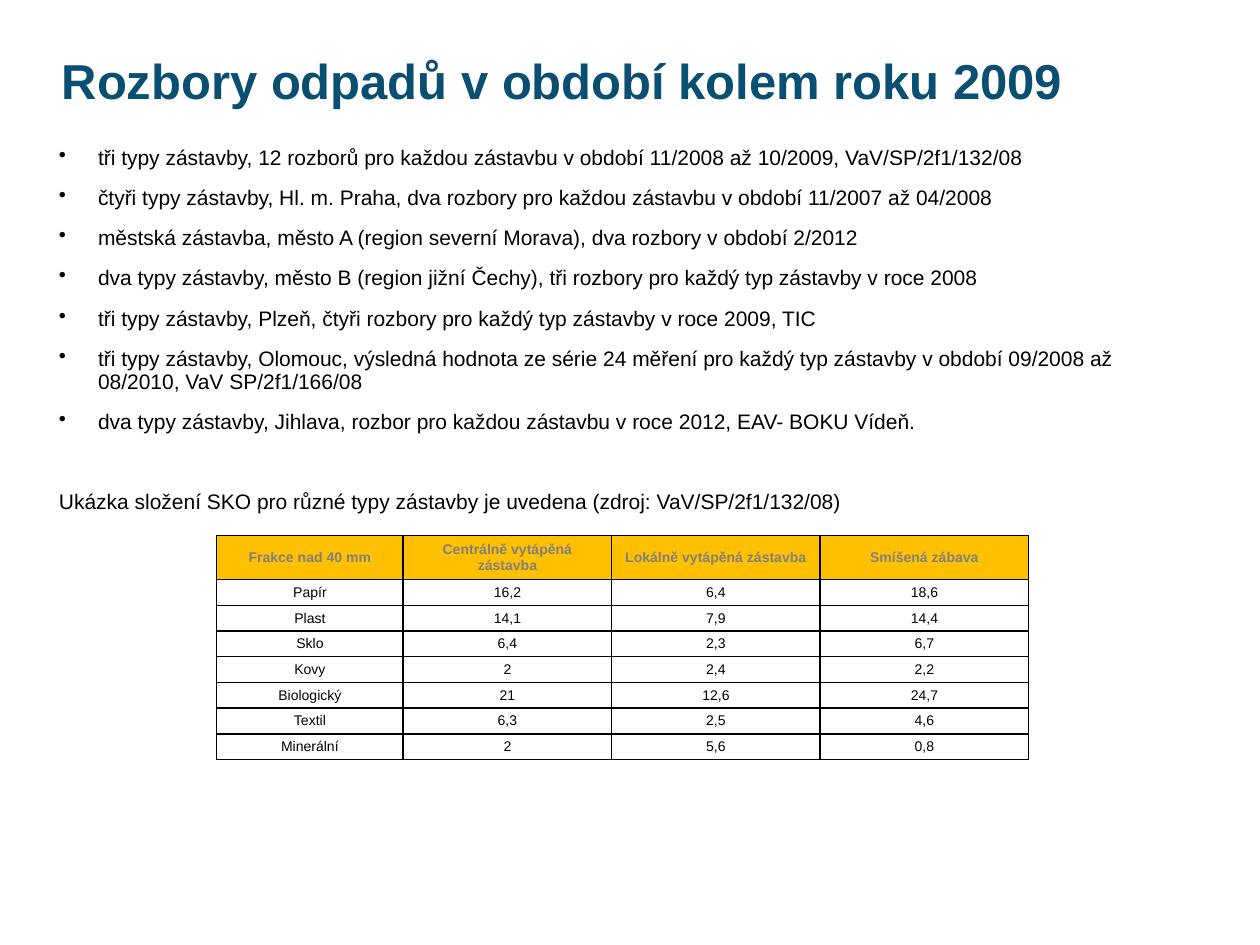
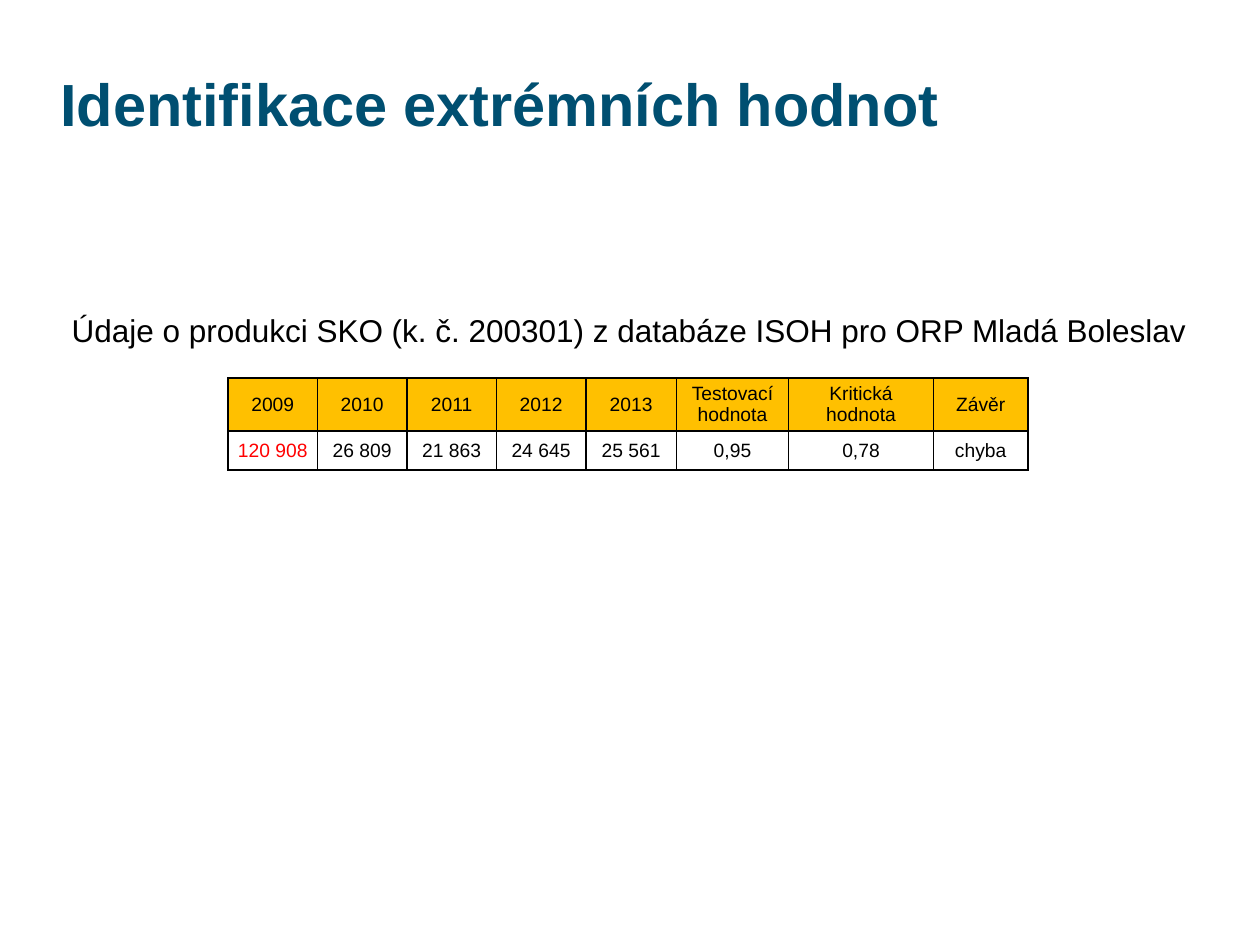
"""Builds two slides on municipal waste analyses and extreme values."""
import pptx
import pptx.chart.data
import pptx.dml.color
import pptx.enum.text
import pptx.oxml
import pptx.oxml.ns
import pptx.util

Inches, Pt = pptx.util.Inches, pptx.util.Pt
PP_ALIGN, ANCHOR = pptx.enum.text.PP_ALIGN, pptx.enum.text.MSO_ANCHOR
COLORS = {"title1": "094F71", "title2": "004F71", "text": "000000",
          "header": "FFC000", "header_text": "808080", "error": "FF0000"}
NS = pptx.oxml.ns.nsdecls("a")


def write(paragraph, text, size=12, color="text", bold=False, align=PP_ALIGN.LEFT,
          line=1.0, before=0, bullet=False):
    if bullet:
        props = paragraph._p.get_or_add_pPr()
        props.set("marL", str(Inches(0.31)))
        props.set("indent", str(-Inches(0.31)))
        props.append(pptx.oxml.parse_xml(f'<a:buChar {NS} char="•"/>'))
    paragraph.alignment = align
    paragraph.line_spacing = line
    paragraph.space_before = Pt(before)
    run = paragraph.add_run()
    run.text = text
    run.font.name = "Arial"
    run.font.size = Pt(size)
    run.font.bold = bold
    run.font.color.rgb = pptx.dml.color.RGBColor.from_string(COLORS[color])


def add_data_table(slide, left, top, widths, heights, rows, size, header_color="text",
                   header_bold=False, errors=()):
    table = slide.shapes.add_table(len(rows), len(widths), Inches(left), Inches(top),
                                   Inches(sum(widths)), Inches(sum(heights))).table
    table.horz_banding = False
    table.first_row = False
    for column, width in zip(table.columns, widths):
        column.width = Inches(width)
    for r, (values, height) in enumerate(zip(rows, heights)):
        table.rows[r].height = Inches(height)
        for c, value in enumerate(values):
            cell = table.cell(r, c)
            cell.vertical_anchor = ANCHOR.MIDDLE
            cell.margin_left = cell.margin_right = Inches(0.07)
            cell.margin_top = cell.margin_bottom = Inches(0.03)
            for side in ("lnL", "lnR", "lnT", "lnB"):
                cell._tc.get_or_add_tcPr().append(pptx.oxml.parse_xml(
                    f'<a:{side} {NS} w="{Pt(1)}"><a:solidFill>'
                    f'<a:srgbClr val="{COLORS["text"]}"/></a:solidFill></a:{side}>'))
            if r == 0:
                cell.fill.solid()
                cell.fill.fore_color.rgb = pptx.dml.color.RGBColor.from_string(COLORS["header"])
                color = header_color
            else:
                cell.fill.background()
                color = "error" if value in errors else "text"
            write(cell.text_frame.paragraphs[0], value, size=size, color=color,
                  bold=header_bold and r == 0, align=PP_ALIGN.CENTER)


deck = pptx.Presentation()
deck.slide_width, deck.slide_height = Inches(10), Inches(7.5)

slides = []
for heading, left, top, size, color in [
    ("Rozbory odpadů v období kolem roku 2009", 0.39, 0, 28, "title1"),
    ("Identifikace extrémních hodnot", 0.38, 0.19, 34, "title2"),
]:
    slide = deck.slides.add_slide(deck.slide_layouts[5])
    title = slide.shapes.title
    title.left, title.top = Inches(left), Inches(top)
    title.width, title.height = Inches(9.24), Inches(1.32)
    title.text_frame.vertical_anchor = ANCHOR.MIDDLE
    write(title.text_frame.paragraphs[0], heading, size=size, color=color, bold=True, line=0.9)
    slides.append(slide)
analyses_slide, extremes_slide = slides

analyses = [
    "tři typy zástavby, 12 rozborů pro každou zástavbu v období 11/2008 až 10/2009, VaV/SP/2f1/132/08",
    "čtyři typy zástavby, Hl. m. Praha, dva rozbory pro každou zástavbu v období 11/2007 až 04/2008",
    "městská zástavba, město A (region severní Morava), dva rozbory v období 2/2012",
    "dva typy zástavby, město B (region jižní Čechy), tři rozbory pro každý typ zástavby v roce 2008",
    "tři typy zástavby, Plzeň, čtyři rozbory pro každý typ zástavby v roce 2009, TIC",
    "tři typy zástavby, Olomouc, výsledná hodnota ze série 24 měření pro každý typ zástavby "
    "v období 09/2008 až 08/2010, VaV SP/2f1/166/08",
    "dva typy zástavby, Jihlava, rozbor pro každou zástavbu v roce 2012, EAV- BOKU Vídeň.",
]
analyses_frame = analyses_slide.shapes.add_textbox(
    Inches(0.37), Inches(1.12), Inches(9.24), Inches(4.77)).text_frame
analyses_frame.word_wrap = True
for i, analysis in enumerate(analyses):
    paragraph = analyses_frame.add_paragraph() if i else analyses_frame.paragraphs[0]
    write(paragraph, analysis, line=0.9, before=10 if i else 0, bullet=True)
write(analyses_frame.add_paragraph(),
      "Ukázka složení SKO pro různé typy zástavby je uvedena (zdroj: VaV/SP/2f1/132/08)",
      line=0.9, before=33)

composition = [
    ("Frakce nad 40 mm", "Centrálně vytápěná zástavba", "Lokálně vytápěná zástavba", "Smíšená zábava"),
    ("Papír", "16,2", "6,4", "18,6"),
    ("Plast", "14,1", "7,9", "14,4"),
    ("Sklo", "6,4", "2,3", "6,7"),
    ("Kovy", "2", "2,4", "2,2"),
    ("Biologický", "21", "12,6", "24,7"),
    ("Textil", "6,3", "2,5", "4,6"),
    ("Minerální", "2", "5,6", "0,8"),
]
add_data_table(analyses_slide, 1.72, 4.25, [1.48] + [1.655] * 3, [0.35] + [1.43 / 7] * 7,
               composition, 8, header_color="header_text", header_bold=True)

production = [
    ("2009", "2010", "2011", "2012", "2013", "Testovací hodnota", "Kritická hodnota", "Závěr"),
    ("120 908", "26 809", "21 863", "24 645", "25 561", "0,95", "0,78", "chyba"),
]
add_data_table(extremes_slide, 1.81, 3, [0.71] * 4 + [0.72, 0.89, 1.15, 0.75], [0.42, 0.31],
               production, 11, errors=("120 908",))

source_frame = extremes_slide.shapes.add_textbox(
    Inches(0.47), Inches(2.42), Inches(9.2), Inches(0.4)).text_frame
source_frame.word_wrap = False
write(source_frame.paragraphs[0],
      "Údaje o produkci SKO (k. č. 200301) z databáze ISOH pro ORP Mladá Boleslav", size=18)

deck.save("out.pptx")
